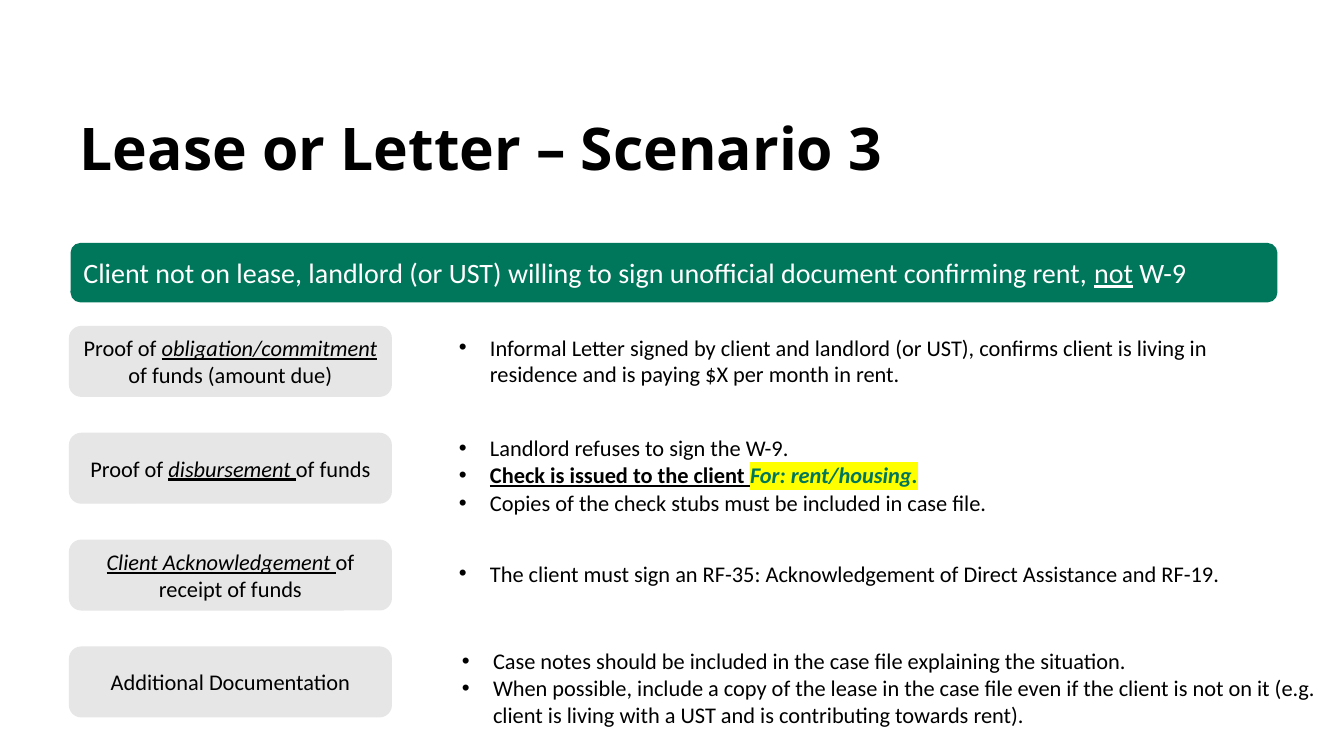
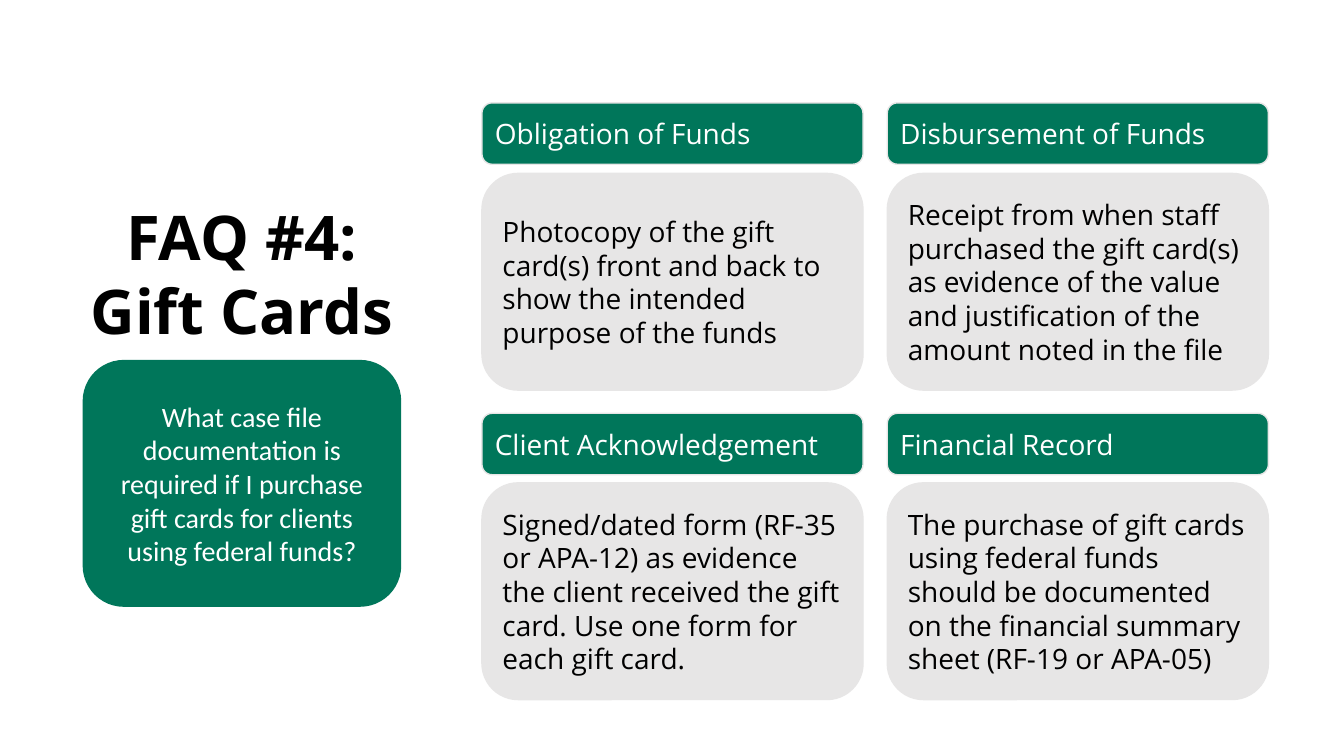
from dataclasses import dataclass

from lxml import etree
from pptx import Presentation
from pptx.dml.color import RGBColor
from pptx.enum.shapes import MSO_SHAPE
from pptx.enum.text import MSO_ANCHOR, MSO_AUTO_SIZE, PP_ALIGN
from pptx.oxml.ns import qn
from pptx.util import Inches, Pt

ROUNDED = MSO_SHAPE.ROUNDED_RECTANGLE
TOP, MIDDLE = MSO_ANCHOR.TOP, MSO_ANCHOR.MIDDLE
LEFT, CENTER = PP_ALIGN.LEFT, PP_ALIGN.CENTER
FIT_SHAPE = MSO_AUTO_SIZE.SHAPE_TO_FIT_TEXT
COMPARISON_LAYOUT, TITLE_ONLY_LAYOUT = 4, 5


@dataclass(frozen=True)
class Theme:
    green: str = "00765A"
    gray: str = "E7E6E6"
    white: str = "FFFFFF"
    black: str = "000000"
    yellow: str = "FFFF00"
    heading_font: str = "Open Sans"
    text_font: str = "Calibri"
    body_size: int = 16
    card_size: int = 20
    border: float = 1
    hanging: float = 0.31


THEME = Theme()


@dataclass(frozen=True)
class Frame:
    left: float
    top: float
    width: float
    height: float


@dataclass(frozen=True)
class Grid:
    left: float
    top: float
    column_step: float
    row_step: float
    width: float
    height: float

    def cell(self, column: int, row: int) -> Frame:
        return Frame(self.left + column * self.column_step,
                     self.top + row * self.row_step, self.width, self.height)


@dataclass(frozen=True)
class Span:
    text: str
    bold: bool | None = None
    italic: bool | None = None
    underline: bool | None = None
    color: str | None = None
    highlight: str | None = None


@dataclass(frozen=True)
class TextStyle:
    font: str
    size: int
    color: str
    align: PP_ALIGN = LEFT
    bold: bool = False


@dataclass(frozen=True)
class BoxStyle:
    fill: str
    text: TextStyle
    outline: str | None = None


@dataclass(frozen=True)
class Bullet:
    spans: tuple[Span, ...]
    spacing: float = 1.0


@dataclass(frozen=True)
class Requirement:
    label: tuple[Span, ...]
    bullets: tuple[Bullet, ...]
    frame: Frame
    indent: float


@dataclass(frozen=True)
class Card:
    heading: str
    detail: str


LIST_TEXT = TextStyle(THEME.text_font, THEME.body_size, THEME.black)
LABEL_BOX = BoxStyle(THEME.gray, TextStyle(THEME.text_font, THEME.body_size, THEME.black, CENTER), THEME.gray)
BANNER_BOX = BoxStyle(THEME.green, TextStyle(THEME.text_font, THEME.card_size, THEME.white))
QUESTION_BOX = BoxStyle(THEME.green, TextStyle(THEME.text_font, THEME.card_size, THEME.white, CENTER))
HEADING_BOX = BoxStyle(THEME.green, TextStyle(THEME.heading_font, THEME.card_size, THEME.white), THEME.gray)
DETAIL_BOX = BoxStyle(THEME.gray, TextStyle(THEME.heading_font, THEME.card_size, THEME.black), THEME.gray)

LABEL_GRID = Grid(0.69, 3.24, 0, 1.06, 3.19, 0.69)
HEADING_GRID = Grid(4.78, 1.02, 4.02, 3.08, 3.78, 0.61)
DETAIL_GRID = Grid(4.78, 1.72, 4.02, 3.07, 3.78, 2.15)

BANNER = (
    Span("Client not on lease, landlord (or UST) willing to sign unofficial document confirming rent, "),
    Span("not", underline=True),
    Span(" W-9"),
)

REQUIREMENTS = (
    Requirement(
        (Span("Proof of "), Span("obligation/commitment ", italic=True, underline=True),
         Span("of funds (amount due)")),
        (Bullet((Span("Informal Letter signed by client and landlord (or UST), confirms client is "
                      "living in residence and is paying $X per month in rent."),)),),
        Frame(3.45, 3.26, 9.52, 0.64), 1.31),
    Requirement(
        (Span("Proof of "), Span("disbursement ", italic=True, underline=True), Span("of funds")),
        (Bullet((Span("Landlord refuses to sign the W-9."),)),
         Bullet((Span("Check is issued to the client ", bold=True, underline=True),
                 Span("For: rent/housing.", bold=True, italic=True,
                      color=THEME.green, highlight=THEME.yellow))),
         Bullet((Span("Copies of the check stubs must be included in case file."),), 1.05)),
        Frame(3.45, 4.26, 7.71, 0.91), 1.31),
    Requirement(
        (Span("Client Acknowledgement ", italic=True, underline=True), Span("of receipt of funds")),
        (Bullet((Span("The client must sign an RF-35: Acknowledgement of Direct Assistance and RF-19."),), 1.05),),
        Frame(3.45, 5.49, 8.83, 0.37), 1.31),
    Requirement(
        (Span("Additional Documentation"),),
        (Bullet((Span("Case notes should be included in the case file explaining the situation."),), 1.05),
         Bullet((Span("When possible, include a copy of the lease in the case file even if the client "
                      "is not on it (e.g. client is living with a UST and is contributing towards rent)."),))),
        Frame(4.48, 6.36, 8.71, 0.92), THEME.hanging),
)

CARDS = (
    Card("Obligation of Funds",
         "Photocopy of the gift card(s) front and back to show the intended purpose of the funds"),
    Card("Disbursement of Funds",
         "Receipt from when staff purchased the gift card(s) as evidence of the value and "
         "justification of the amount noted in the file"),
    Card("Client Acknowledgement",
         "Signed/dated form (RF-35 or APA-12) as evidence the client received the gift card. "
         "Use one form for each gift card."),
    Card("Financial Record",
         "The purchase of gift cards using federal funds should be documented on the financial "
         "summary sheet (RF-19 or APA-05)"),
)


def place(shape, frame: Frame) -> None:
    shape.left, shape.top = Inches(frame.left), Inches(frame.top)
    shape.width, shape.height = Inches(frame.width), Inches(frame.height)


def add_highlight(run, color: str) -> None:
    highlight = etree.Element(qn("a:highlight"))
    etree.SubElement(highlight, qn("a:srgbClr"), val=color)
    run.font._element.find(qn("a:solidFill")).addnext(highlight)


def write(para, spans: tuple[Span, ...], style: TextStyle) -> None:
    para.alignment = style.align
    para.font.name = style.font
    para.font.size = Pt(style.size)
    para.font.bold = style.bold
    para.font.color.rgb = RGBColor.from_string(style.color)
    for span in spans:
        run = para.add_run()
        run.text = span.text
        run.font.bold = span.bold
        run.font.italic = span.italic
        run.font.underline = span.underline
        if span.color:
            run.font.color.rgb = RGBColor.from_string(span.color)
        if span.highlight:
            add_highlight(run, span.highlight)


def add_bullet(para, indent: float) -> None:
    properties = para._p.get_or_add_pPr()
    properties.set("marL", str(Inches(indent)))
    properties.set("indent", str(-Inches(THEME.hanging)))
    etree.SubElement(properties, qn("a:buFont"), typeface="Arial")
    etree.SubElement(properties, qn("a:buChar"), char="•")


def prepare_placeholder(placeholder, frame: Frame):
    place(placeholder, frame)
    text_frame = placeholder.text_frame
    text_frame.word_wrap = True
    text_frame.auto_size = FIT_SHAPE
    text_frame.vertical_anchor = TOP
    return text_frame


def set_title(page, text: str, frame: Frame, size: int, align: PP_ALIGN) -> None:
    text_frame = prepare_placeholder(page.shapes.title, frame)
    style = TextStyle(THEME.heading_font, size, THEME.black, align, bold=True)
    write(text_frame.paragraphs[0], (Span(text),), style)


def fill_list(placeholder, requirement: Requirement) -> None:
    text_frame = prepare_placeholder(placeholder, requirement.frame)
    for index, bullet in enumerate(requirement.bullets):
        para = text_frame.add_paragraph() if index else text_frame.paragraphs[0]
        para.line_spacing = bullet.spacing
        para.space_before = Pt(0)
        add_bullet(para, requirement.indent)
        write(para, bullet.spans, LIST_TEXT)


def add_box(page, frame: Frame, spans: tuple[Span, ...], style: BoxStyle) -> None:
    box = page.shapes.add_shape(ROUNDED, 0, 0, 0, 0)
    place(box, frame)
    box.shadow.inherit = False
    box.fill.solid()
    box.fill.fore_color.rgb = RGBColor.from_string(style.fill)
    if style.outline:
        box.line.color.rgb = RGBColor.from_string(style.outline)
        box.line.width = Pt(THEME.border)
    else:
        box.line.fill.background()
    box.text_frame.word_wrap = True
    box.text_frame.vertical_anchor = MIDDLE
    write(box.text_frame.paragraphs[0], spans, style.text)


def build_scenario(deck) -> None:
    page = deck.slides.add_slide(deck.slide_layouts[COMPARISON_LAYOUT])
    set_title(page, "Lease or Letter – Scenario 3", Frame(0.69, 1.06, 12.64, 0.81), 42, LEFT)
    add_box(page, Frame(0.7, 2.41, 11.97, 0.59), BANNER, BANNER_BOX)
    for row, requirement in enumerate(REQUIREMENTS):
        add_box(page, LABEL_GRID.cell(0, row), requirement.label, LABEL_BOX)
        fill_list(page.placeholders[row + 1], requirement)


def build_gift_cards(deck) -> None:
    page = deck.slides.add_slide(deck.slide_layouts[TITLE_ONLY_LAYOUT])
    set_title(page, "FAQ #4: Gift Cards", Frame(0.69, 1.92, 3.42, 1.58), 44, CENTER)
    question = "What case file documentation is required if I purchase gift cards for clients using federal funds?"
    add_box(page, Frame(0.82, 3.57, 3.16, 2.45), (Span(question),), QUESTION_BOX)
    for index, card in enumerate(CARDS):
        row, column = divmod(index, 2)
        add_box(page, DETAIL_GRID.cell(column, row), (Span(card.detail),), DETAIL_BOX)
        add_box(page, HEADING_GRID.cell(column, row), (Span(card.heading),), HEADING_BOX)


def main() -> None:
    deck = Presentation()
    deck.slide_width, deck.slide_height = Inches(13.33), Inches(7.5)
    build_scenario(deck)
    build_gift_cards(deck)
    deck.save("out.pptx")


if __name__ == "__main__":
    main()
